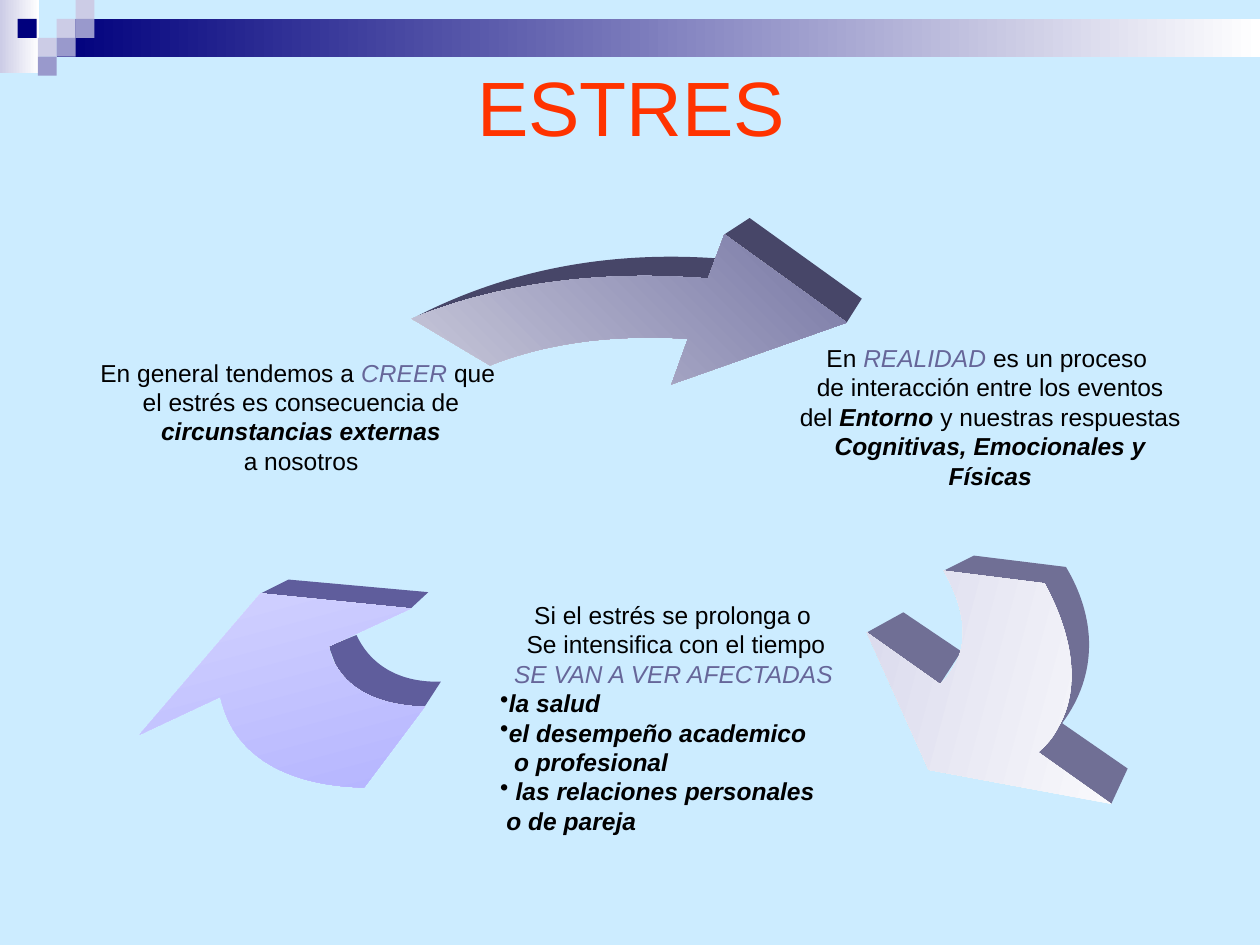
from lxml import etree
from pptx import Presentation
from pptx.dml.color import RGBColor
from pptx.enum.shapes import MSO_SHAPE
from pptx.enum.text import MSO_ANCHOR as Anchor, PP_ALIGN as Align
from pptx.oxml.ns import qn
from pptx.util import Inches, Pt

SKY = RGBColor(0xCC, 0xEC, 0xFF)
WHITE = RGBColor(0xFF, 0xFF, 0xFF)
BLACK = RGBColor(0, 0, 0)
NAVY = RGBColor(0x00, 0x00, 0x7D)
LILAC = RGBColor(0xCC, 0xCC, 0xE6)
LAVENDER = RGBColor(0x99, 0x99, 0xCC)
ORANGE = RGBColor(0xFF, 0x33, 0x00)
SLATE = RGBColor(0x66, 0x66, 0x99)
VIOLET = RGBColor(0x99, 0x99, 0xFF)
INK = RGBColor(0x47, 0x46, 0x68)
GREY = RGBColor(0x70, 0x6F, 0x95)
INDIGO = RGBColor(0x5F, 0x5D, 0x9C)

# Header: left, top, width, height, colours (two make a gradient)
SQUARE = 0.15
HEADER = [
    (0, 0, 0.31, 0.58, (LILAC, WHITE)),
    (0.45, 0.15, 9.55, 0.3, (NAVY, WHITE)),
] + [(left, top, SQUARE, SQUARE, (color,)) for left, top, color in [
    (0.45, 0.15, LILAC), (0.6, 0, LILAC), (0.6, 0.15, LAVENDER),
    (0.3, 0.3, LILAC), (0.14, 0.15, NAVY), (0.45, 0.3, LAVENDER),
    (0.3, 0.45, LAVENDER)]]

# Arrows: frame, then sides and front as (colours, gradient angle, outlines).
# An outline is a start point and segments: two numbers make a line,
# six make a Bezier curve.
ARROWS = [
    # From belief to reality
    ((2.25, 2.19, 5.76, 2.91), [
        ((INK,), 0, [
            [(3.27, 2.53), (3.9, 2.2, 4.7, 1.98, 5.69, 2.05), (5.63, 2.21)],
            [(5.75, 1.86), (5.95, 1.73), (6.84, 2.37), (6.72, 2.56)]]),
        ((WHITE, SLATE), 45, [
            [(5.46, 2.69), (5.35, 2.68, 5.24, 2.68, 5.12, 2.68),
             (4.67, 2.68, 4.24, 2.76, 3.89, 2.9), (3.27, 2.53),
             (3.79, 2.31, 4.45, 2.19, 5.12, 2.19),
             (5.29, 2.19, 5.46, 2.2, 5.62, 2.21), (5.75, 1.86), (6.72, 2.56),
             (5.33, 3.05)]])]),
    # From reality to consequences
    ((2.69, 1.64, 6.44, 5.4), [
        ((GREY,), 0, [
            [(7.49, 4.53), (7.73, 4.41), (8.46, 4.5),
             (8.7, 4.9, 8.72, 5.35, 8.43, 5.74), (8.95, 6.1), (8.82, 6.38),
             (8.24, 5.97), (8.29, 4.63)],
            [(6.88, 5.02), (7.17, 4.86), (7.63, 5.17), (7.46, 5.43)]]),
        ((WHITE, LAVENDER), 165, [
            [(7.46, 5.43), (7.51, 5.39, 7.54, 5.34, 7.57, 5.29),
             (7.69, 5.1, 7.66, 4.83, 7.49, 4.53), (8.29, 4.63),
             (8.53, 5.07, 8.57, 5.48, 8.4, 5.77),
             (8.36, 5.85, 8.31, 5.91, 8.24, 5.97), (8.82, 6.38), (7.37, 6.11),
             (6.88, 5.02)]])]),
    # From consequences back to belief
    ((1.11, 1.64, 6.44, 5.4), [
        ((INDIGO,), 0, [
            [(2.07, 4.71), (2.29, 4.6), (3.4, 4.7), (3.26, 4.83)],
            [(2.61, 5.13), (2.83, 5.04), (2.95, 5.3, 3.2, 5.42, 3.5, 5.41),
             (3.37, 5.61), (3.03, 5.6, 2.79, 5.49, 2.67, 5.29)]]),
        ((WHITE, VIOLET), 285, [
            [(2.61, 5.13), (2.62, 5.19, 2.64, 5.25, 2.67, 5.29),
             (2.79, 5.49, 3.03, 5.6, 3.37, 5.61), (2.89, 6.25),
             (2.38, 6.24, 2.01, 6.07, 1.84, 5.77),
             (1.8, 5.7, 1.77, 5.62, 1.75, 5.53), (1.11, 5.83), (2.07, 4.71),
             (3.26, 4.83)]])]),
]

# Text styles: colour, bold, italic
PLAIN = (BLACK, False, False)
TERM = (SLATE, False, True)
STRONG = (BLACK, True, True)

# Texts: left, top, width, alignment, paragraphs of (indent, bullet, spans)
TEXTS = [
    (0.69, 2.72, 3.4, Align.CENTER, [
        (0, None, [("En general tendemos a ", PLAIN), ("CREER", TERM), (" que ", PLAIN)]),
        (0, None, [("el estrés es consecuencia de", PLAIN)]),
        (0, None, [("circunstancias externas", STRONG)]),
        (0, None, [("a nosotros", PLAIN)])]),
    (3.97, 5.11, 2.9, Align.LEFT, [
        (0.27, None, [("Si el estrés se prolonga o", PLAIN)]),
        (0.21, None, [("Se intensifica con el tiempo", PLAIN)]),
        (0.11, None, [("SE VAN A VER AFECTADAS", TERM)]),
        (0, "•", [("la salud", STRONG)]),
        (0, "•", [("el desempeño academico", STRONG)]),
        (0.11, None, [("o profesional", STRONG)]),
        (0, "•", [(" ", PLAIN), ("las relaciones personales", STRONG)]),
        (0.05, None, [("o de pareja", STRONG)])]),
    (6.16, 2.72, 3.4, Align.CENTER, [
        (0, None, [("En ", PLAIN), ("REALIDAD ", TERM), ("es un proceso ", PLAIN)]),
        (0, None, [("de interacción entre los eventos", PLAIN)]),
        (0, None, [("del ", PLAIN), ("Entorno", STRONG), (" y nuestras respuestas", PLAIN)]),
        (0, None, [("Cognitivas, Emocionales y", STRONG)]),
        (0, None, [("Físicas", STRONG)])]),
]


def paint(shape, colors, angle=0):
    shape.shadow.inherit = False
    shape.line.fill.background()
    if len(colors) == 1:
        shape.fill.solid()
        shape.fill.fore_color.rgb = colors[0]
        return
    shape.fill.gradient()
    shape.fill.gradient_angle = angle
    for stop, color in zip(shape.fill.gradient_stops, colors):
        stop.color.rgb = color


def add_outlines(page, frame, outlines):
    """Add a freeform filling the frame and draw the outlines in it."""
    left, top, width, height = map(Inches, frame)
    builder = page.shapes.build_freeform(left, top)
    builder.add_line_segments(
        [(left + width, top), (left + width, top + height), (left, top + height)])
    shape = builder.convert_to_shape()
    geometry = next(shape._element.iter(qn("a:path")))
    for child in list(geometry):
        geometry.remove(child)
    for outline in outlines:
        for index, segment in enumerate(outline):
            curve = "a:cubicBezTo" if len(segment) == 6 else "a:lnTo"
            command = etree.SubElement(geometry, qn(curve if index else "a:moveTo"))
            for x, y in zip(segment[::2], segment[1::2]):
                point = etree.SubElement(command, qn("a:pt"))
                point.set("x", str(Inches(x) - left))
                point.set("y", str(Inches(y) - top))
        etree.SubElement(geometry, qn("a:close"))
    return shape


def add_text(page, left, top, width, height):
    box = page.shapes.add_textbox(*map(Inches, (left, top, width, height)))
    frame = box.text_frame
    frame.word_wrap = True
    frame.vertical_anchor = Anchor.MIDDLE
    return frame


def set_indent(para, indent, bullet):
    props = para._p.get_or_add_pPr()
    props.set("marL", str(Inches(indent)))
    props.set("indent", "0")
    if bullet:
        etree.SubElement(props, qn("a:buChar")).set("char", bullet)


deck = Presentation()
deck.slide_width, deck.slide_height = Inches(10), Inches(7.5)
page = deck.slides.add_slide(deck.slide_layouts[6])
page.background.fill.solid()
page.background.fill.fore_color.rgb = SKY

# Header band and squares
for *place, colors in HEADER:
    paint(page.shapes.add_shape(MSO_SHAPE.RECTANGLE, *map(Inches, place)), colors)

# Title
frame = add_text(page, 0.51, 0.21, 9, 1.25)
para = frame.paragraphs[0]
para.text = "ESTRES"
para.alignment = Align.CENTER
para.font.name, para.font.size = "Arial", Pt(44)
para.font.color.rgb = ORANGE

# Cycle of arrows
for place, faces in ARROWS:
    for colors, angle, outlines in faces:
        paint(add_outlines(page, place, outlines), colors, angle)

# Texts between the arrows
for left, top, width, alignment, paragraphs in TEXTS:
    frame = add_text(page, left, top, width, 1.17)
    frame.margin_left = frame.margin_right = frame.margin_top = frame.margin_bottom = 0
    for index, (indent, bullet, spans) in enumerate(paragraphs):
        para = frame.add_paragraph() if index else frame.paragraphs[0]
        para.alignment = alignment
        para.font.name, para.font.size = "Arial", Pt(14)
        set_indent(para, indent, bullet)
        for words, (color, bold, italic) in spans:
            span = para.add_run()
            span.text = words
            span.font.color.rgb = color
            span.font.bold, span.font.italic = bold, italic

deck.save("out.pptx")
